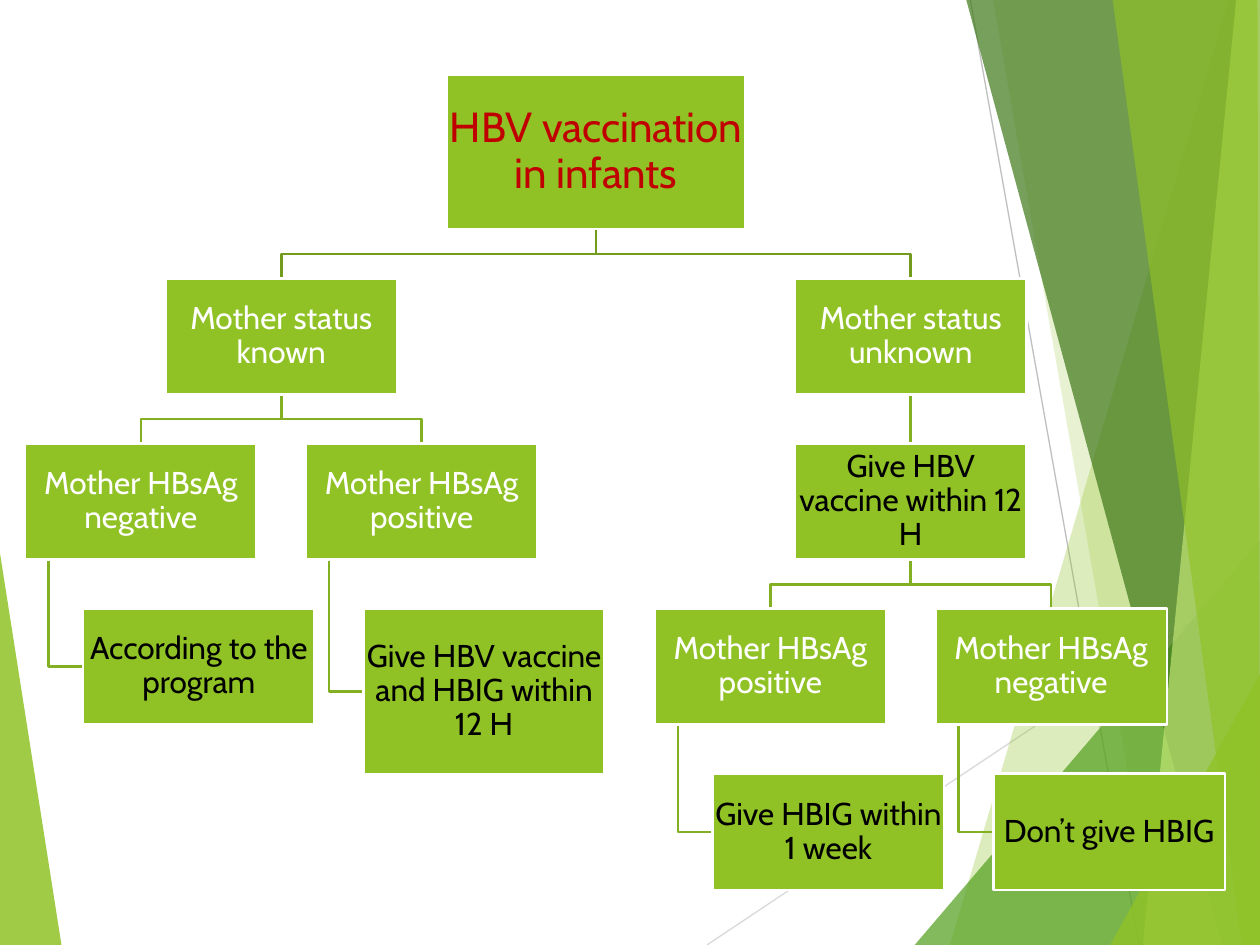
from lxml import etree
from pptx import Presentation
from pptx.dml.color import RGBColor
from pptx.enum import shapes, text
from pptx.oxml import ns
from pptx.util import Cm, Pt

LIME = RGBColor(0x90, 0xC2, 0x26)
GREEN = RGBColor(0x54, 0xA0, 0x21)
DARK = RGBColor(0x3F, 0x78, 0x19)
PALE = RGBColor(0xC0, 0xE4, 0x74)
LINK = RGBColor(0x83, 0xB0, 0x22)
TRUNK = RGBColor(0x73, 0x9B, 0x1E)
GREY = RGBColor(0xBF, 0xBF, 0xBF)
SILVER = RGBColor(0xD9, 0xD9, 0xD9)
RED = RGBColor(0xC0, 0x00, 0x00)
WHITE = RGBColor(0xFF, 0xFF, 0xFF)
BLACK = RGBColor(0x00, 0x00, 0x00)

WIDE, HIGH = 25.4, 19.05      # slide
BOX_W, BOX_H = 4.67, 2.34     # usual box
TOP, STEP = 5.61, 3.33        # first row below the root, row pitch
SPREAD = 2.83                 # half the distance between two siblings
INDENT = 1.17                 # leaf set in from its parent
STEM = 0.47                   # leaf link from the parent's left edge
DROP = 0.5                    # from a box down to the cross bar
GAP = 0.99                    # between rows

# Background facets: points, colour, opacity in percent
FACETS = [
    ([(0, 11.15), (1.24, HIGH), (0, HIGH)], LIME, 85),
    ([(24.77, 0), (19.15, HIGH), (WIDE, HIGH), (WIDE, 0)], LIME, 30),
    ([(20.02, 0), (23.34, HIGH), (WIDE, HIGH), (WIDE, 0)], LIME, 20),
    ([(18.44, HIGH), (WIDE, 10.9), (WIDE, HIGH)], GREEN, 72),
    ([(19.48, 0), (24.64, HIGH), (WIDE, HIGH), (WIDE, 0)], DARK, 70),
    ([(24.92, 0), (23.04, HIGH), (WIDE, HIGH), (WIDE, 0)], PALE, 70),
    ([(22.43, 0), (25.04, HIGH), (WIDE, HIGH), (25.35, 0)], LIME, 65),
    ([(22.38, HIGH), (WIDE, 13.59), (WIDE, HIGH)], LIME, 80),
]


def outline(slide, points, close):
    pts = [(Cm(x), Cm(y)) for x, y in points]
    form = slide.shapes.build_freeform(*pts[0], scale=1.0)
    form.add_line_segments(pts[1:], close=close)
    shape = form.convert_to_shape()
    shape.shadow.inherit = False
    return shape


def facet(slide, points, color, alpha):
    shape = outline(slide, points, True)
    shape.fill.solid()
    shape.fill.fore_color.rgb = color
    shape.line.fill.background()
    tone = shape._element.spPr.find(".//" + ns.qn("a:srgbClr"))
    etree.SubElement(tone, ns.qn("a:alpha"), val=str(alpha * 1000))


def line(slide, start, end, color, width):
    (x1, y1), (x2, y2) = start, end
    rule = slide.shapes.add_connector(
        shapes.MSO_CONNECTOR.STRAIGHT, Cm(x1), Cm(y1), Cm(x2), Cm(y2))
    rule.line.color.rgb = color
    rule.line.width = Pt(width)
    etree.SubElement(rule._element.spPr, ns.qn("a:effectLst"))


def link(slide, points, color=LINK):
    shape = outline(slide, points, False)
    shape.fill.background()
    shape.line.color.rgb = color
    shape.line.width = Pt(1.5)


def fork(slide, x, y, half, color=LINK):
    """Join a parent's bottom centre to two children."""
    for end in (x + half, x - half):
        link(slide, [(x, y), (x, y + DROP), (end, y + DROP), (end, y + GAP)],
             color)


def hook(slide, x, y, height):
    """Join a parent, by its left edge x and bottom y, to its leaf's side."""
    low = y + GAP + height / 2
    link(slide, [(x + STEM, y), (x + STEM, low), (x + INDENT, low)])


def write(shape, words, size=18, color=WHITE, inset=0.03):
    frame = shape.text_frame
    frame.word_wrap = True
    frame.vertical_anchor = text.MSO_ANCHOR.MIDDLE
    frame.margin_left = frame.margin_right = Cm(inset)
    frame.margin_top = frame.margin_bottom = Cm(inset)
    para = frame.paragraphs[0]
    para.alignment = text.PP_ALIGN.CENTER
    para.line_spacing = 0.9
    run = para.add_run()
    run.text = words
    run.font.name = "Cabin"
    run.font.size = Pt(size)
    run.font.color.rgb = color


def box(slide, words, x, y, w=BOX_W, h=BOX_H, **style):
    shape = slide.shapes.add_shape(
        shapes.MSO_SHAPE.RECTANGLE, Cm(x), Cm(y), Cm(w), Cm(h))
    shape.shadow.inherit = False
    shape.fill.solid()
    shape.fill.fore_color.rgb = LIME
    shape.line.color.rgb = WHITE
    shape.line.width = Pt(1.5)
    write(shape, words, **style)


def backdrop(slide):
    facet(slide, *FACETS[0])
    line(slide, (14.25, HIGH), (WIDE, 11.61), SILVER, 0.75)
    line(slide, (19.56, 0), (22.96, HIGH), GREY, 0.75)
    for item in FACETS[1:]:
        facet(slide, *item)


def tree(slide):
    left, right = 5.67, 18.36                 # branch centres
    mid = (left + right) / 2
    rows = [TOP + STEP * n for n in range(4)]
    ends = [y + BOX_H for y in rows]
    known, other = left - BOX_W / 2, right - BOX_W / 2
    tall, broad = 3.35, 4.85                  # the larger leaf

    # Links
    fork(slide, mid, TOP - GAP, (right - left) / 2, TRUNK)
    fork(slide, left, ends[0], SPREAD)
    line(slide, (right, ends[0]), (right, rows[1]), LINK, 1.5)
    fork(slide, right, ends[1], SPREAD)
    hook(slide, known - SPREAD, ends[1], BOX_H)
    hook(slide, known + SPREAD, ends[1], tall)
    for x in (other - SPREAD, other + SPREAD):
        hook(slide, x, ends[2], BOX_H)

    # Root
    box(slide, "HBV vaccination in infants", mid - 3.01, 1.5, 6.02, 3.12,
        size=24, color=RED, inset=0.04)

    # Known status
    box(slide, "Mother status known", known, rows[0])
    box(slide, "Mother HBsAg negative", known - SPREAD, rows[1])
    box(slide, "According to the program", known - SPREAD + INDENT, rows[2],
        color=BLACK)
    box(slide, "Mother HBsAg positive", known + SPREAD, rows[1])
    box(slide, "Give HBV vaccine and HBIG within 12 H",
        known + SPREAD + INDENT, rows[2], broad, tall, color=BLACK)

    # Unknown status
    box(slide, "Mother status unknown", other, rows[0])
    box(slide, "Give HBV vaccine within 12 H", other, rows[1], color=BLACK)
    for x, state, advice in (
            (other - SPREAD, "positive", "Give HBIG within 1 week"),
            (other + SPREAD, "negative", "Don’t give HBIG")):
        box(slide, "Mother HBsAg " + state, x, rows[2])
        box(slide, advice, x + INDENT, rows[3], color=BLACK)


def main():
    deck = Presentation()
    deck.slide_width, deck.slide_height = Cm(WIDE), Cm(HIGH)
    slide = deck.slides.add_slide(deck.slide_layouts[6])
    backdrop(slide)
    tree(slide)
    deck.save("out.pptx")


if __name__ == "__main__":
    main()
